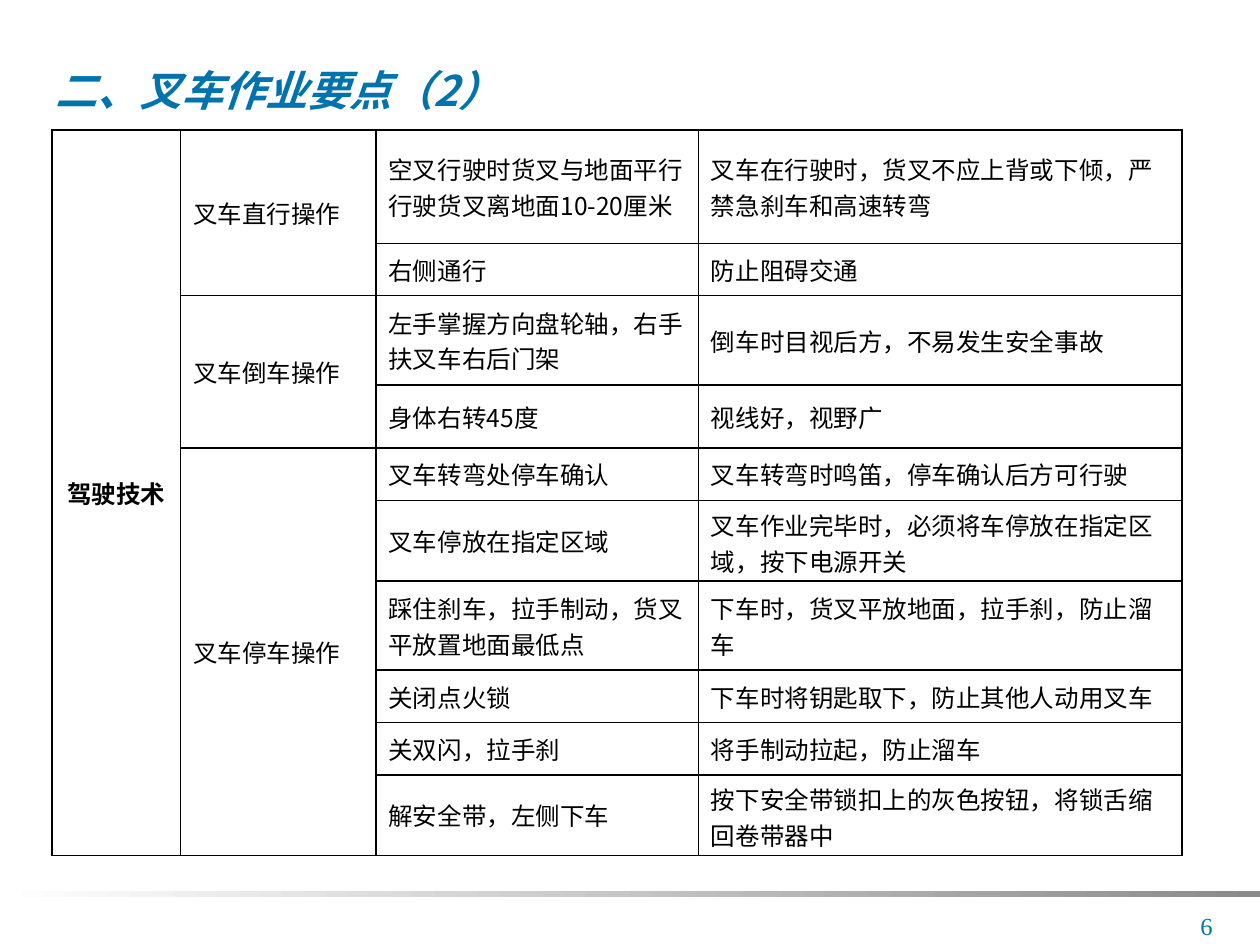
from lxml import etree
from pptx import Presentation
from pptx.dml.color import RGBColor
from pptx.enum.shapes import MSO_SHAPE
from pptx.enum.text import MSO_ANCHOR, PP_ALIGN
from pptx.oxml import parse_xml
from pptx.oxml.ns import nsdecls, qn
from pptx.util import Pt

CJK = "Noto Sans CJK SC"
BLUE, BLACK, WHITE, GREY = "0073AD", "000000", "FFFFFF", "8B8B8B"

COLUMN_WIDTHS = [73.4, 111.6, 184.3, 276.5]
ROW_HEIGHTS = [64.8, 30, 51, 36, 30, 46, 51, 30, 29.8, 46]

SKILL = "驾驶技术"
# Each operation with its (step, reason) rows
OPERATIONS = [
    ("叉车直行操作", [
        ("空叉行驶时货叉与地面平行行驶货叉离地面10-20厘米",
         "叉车在行驶时，货叉不应上背或下倾，严禁急刹车和高速转弯"),
        ("右侧通行", "防止阻碍交通"),
    ]),
    ("叉车倒车操作", [
        ("左手掌握方向盘轮轴，右手扶叉车右后门架", "倒车时目视后方，不易发生安全事故"),
        ("身体右转45度", "视线好，视野广"),
    ]),
    ("叉车停车操作", [
        ("叉车转弯处停车确认", "叉车转弯时鸣笛，停车确认后方可行驶"),
        ("叉车停放在指定区域", "叉车作业完毕时，必须将车停放在指定区域，按下电源开关"),
        ("踩住刹车，拉手制动，货叉平放置地面最低点", "下车时，货叉平放地面，拉手刹，防止溜车"),
        ("关闭点火锁", "下车时将钥匙取下，防止其他人动用叉车"),
        ("关双闪，拉手刹", "将手制动拉起，防止溜车"),
        ("解安全带，左侧下车", "按下安全带锁扣上的灰色按钮，将锁舌缩回卷带器中"),
    ]),
]


def color(hex_value):
    return RGBColor.from_string(hex_value)


def write(frame, text, size=14, font=CJK, ink=BLACK, bold=False, italic=False,
          align=PP_ALIGN.LEFT):
    paragraph = frame.paragraphs[0]
    paragraph.alignment = align
    run = paragraph.add_run()
    run.text = text
    run.font.size = Pt(size)
    run.font.name = font
    run.font.bold = bold
    run.font.italic = italic
    run.font.color.rgb = color(ink)
    east_asian = etree.SubElement(run.font._element, qn("a:ea"))
    east_asian.set("typeface", font)


def add_title(slide, left, top, width, height):
    frame = slide.shapes.add_textbox(Pt(left), Pt(top), Pt(width), Pt(height)).text_frame
    frame.word_wrap = False
    frame.vertical_anchor = MSO_ANCHOR.MIDDLE
    frame.margin_left = frame.margin_right = Pt(4.3)
    frame.margin_top = frame.margin_bottom = Pt(0.7)
    write(frame, "二、叉车作业要点（2）", size=24, ink=BLUE, bold=True, italic=True)


def format_cell(cell):
    cell.vertical_anchor = MSO_ANCHOR.MIDDLE
    properties = cell._tc.get_or_add_tcPr()
    for position, side in enumerate("LRTB"):
        properties.insert(position, parse_xml(
            f'<a:ln{side} {nsdecls("a")} w="{Pt(1)}"><a:solidFill>'
            f'<a:srgbClr val="{BLACK}"/></a:solidFill></a:ln{side}>'))
    cell.fill.background()


def add_operations_table(slide, left, top, width, height):
    table = slide.shapes.add_table(len(ROW_HEIGHTS), len(COLUMN_WIDTHS), Pt(left), Pt(top),
                                   Pt(width), Pt(height)).table
    table.first_row = table.horz_banding = False
    for column, column_width in zip(table.columns, COLUMN_WIDTHS):
        column.width = Pt(column_width)
    for row, row_height in zip(table.rows, ROW_HEIGHTS):
        row.height = Pt(row_height)
    for cell in table.iter_cells():
        format_cell(cell)

    # Skill heading over all rows
    table.cell(0, 0).merge(table.cell(len(ROW_HEIGHTS) - 1, 0))
    write(table.cell(0, 0).text_frame, SKILL, bold=True, align=PP_ALIGN.CENTER)

    # Operations, each spanning its steps
    first = 0
    for operation, steps in OPERATIONS:
        table.cell(first, 1).merge(table.cell(first + len(steps) - 1, 1))
        write(table.cell(first, 1).text_frame, operation)
        for index, (step, reason) in enumerate(steps, first):
            write(table.cell(index, 2).text_frame, step)
            write(table.cell(index, 3).text_frame, reason)
        first += len(steps)


def add_footer(slide, left, top, width, height):
    # Fading rule
    rule = slide.shapes.add_shape(MSO_SHAPE.RECTANGLE, Pt(left), Pt(top), Pt(width), Pt(3.6))
    rule.shadow.inherit = False
    rule.line.fill.background()
    rule.fill.gradient()
    rule.fill.gradient_angle = 0
    for stop, shade, position in zip(rule.fill.gradient_stops, (WHITE, GREY), (0, 1)):
        stop.color.rgb = color(shade)
        stop.position = position

    # Page number
    number_width, number_height = 64, 23
    page_number = slide.shapes.add_textbox(
        Pt(left + width - 20 - number_width), Pt(top + height - number_height),
        Pt(number_width), Pt(number_height)).text_frame
    page_number.word_wrap = True
    write(page_number, "6", font="Times New Roman", ink=BLUE, align=PP_ALIGN.RIGHT)


def main():
    deck = Presentation()
    deck.slide_width, deck.slide_height = Pt(720), Pt(540)
    slide = deck.slides.add_slide(deck.slide_layouts[6])
    add_footer(slide, 0, 509, 720, 31)
    add_title(slide, 27.4, 21.6, 648, 59.8)
    add_operations_table(slide, 29.8, 74.2, sum(COLUMN_WIDTHS), sum(ROW_HEIGHTS))
    deck.save("out.pptx")


if __name__ == "__main__":
    main()
